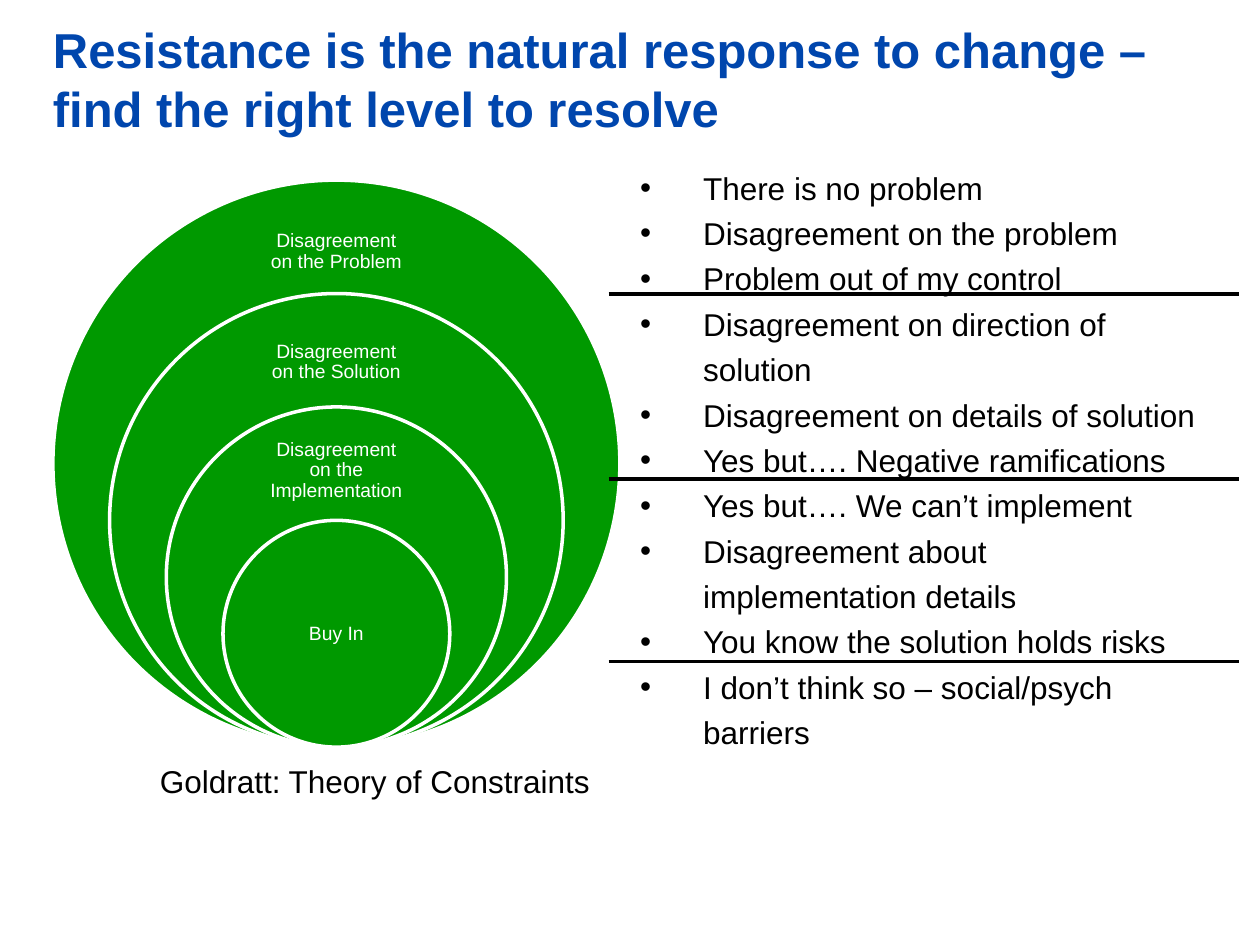
from lxml import etree
from pptx import Presentation
from pptx.dml.color import RGBColor
from pptx.enum.shapes import MSO_CONNECTOR, MSO_SHAPE
from pptx.enum.text import MSO_ANCHOR, MSO_AUTO_SIZE, PP_ALIGN
from pptx.oxml.ns import qn
from pptx.util import Inches, Pt

OVAL = MSO_SHAPE.OVAL
STRAIGHT = MSO_CONNECTOR.STRAIGHT
TOP, MIDDLE = MSO_ANCHOR.TOP, MSO_ANCHOR.MIDDLE
LEFT, CENTER = PP_ALIGN.LEFT, PP_ALIGN.CENTER
NO_FIT, GROW = MSO_AUTO_SIZE.NONE, MSO_AUTO_SIZE.SHAPE_TO_FIT_TEXT

COLORS = {"title": "0046AD", "circle": "009900", "outline": "FFFFFF",
          "label": "FFFFFF", "text": "000000", "divider": "000000"}

TITLE = "Resistance is the natural response to change – find the right level to resolve"
# Label, then top and height of its box
LEVELS = [
    ("Disagreement on the Problem", 1.66, 0.68),
    ("Disagreement on the Solution", 2.55, 0.65),
    ("Disagreement on the Implementation", 3.43, 0.61),
    ("Buy In", 4.58, 0.9),
]
OBJECTIONS = [
    "There is no problem",
    "Disagreement on the problem",
    "Problem out of my control",
    "Disagreement on direction of solution",
    "Disagreement on details of solution",
    "Yes but…. Negative ramifications",
    "Yes but…. We can’t implement",
    "Disagreement about implementation details",
    "You know the solution holds risks",
    "I don’t think so – social/psych barriers",
]


class SlideBuilder:
    font = "Arial"

    def __init__(self, slide):
        self.slide = slide

    def color(self, name):
        return RGBColor.from_string(COLORS[name])

    def style(self, paragraph, size, color, bold=False, align=LEFT):
        paragraph.alignment = align
        for run in paragraph.runs:
            run.font.name = self.font
            run.font.size = Pt(size)
            run.font.bold = bold
            run.font.color.rgb = self.color(color)

    def placeholder(self, index, box, anchor):
        holder = self.slide.placeholders[index]
        holder.left, holder.top, holder.width, holder.height = map(Inches, box)
        frame = holder.text_frame
        frame.margin_left = frame.margin_top = frame.margin_right = frame.margin_bottom = 0
        frame.word_wrap = True
        frame.auto_size = NO_FIT
        frame.vertical_anchor = anchor
        return frame

    def title(self, text, box):
        frame = self.placeholder(0, box, MIDDLE)
        frame.text = text
        self.style(frame.paragraphs[0], 28, "title", bold=True)

    def bullets(self, items, box):
        frame = self.placeholder(1, box, TOP)
        frame.text = "\n".join(items)
        for paragraph in frame.paragraphs:
            properties = paragraph._p.get_or_add_pPr()
            properties.set("marL", str(Inches(0.5)))
            properties.set("indent", str(-Inches(0.5)))
            etree.SubElement(properties, qn("a:buFont")).set("typeface", self.font)
            etree.SubElement(properties, qn("a:buChar")).set("char", "•")
            paragraph.line_spacing = 1.2
            paragraph.space_before = Pt(0)
            paragraph.space_after = Pt(0)
            self.style(paragraph, 18, "text")

    def circle(self, group, center, bottom, diameter):
        circle = group.shapes.add_shape(
            OVAL, Inches(center - diameter / 2), Inches(bottom - diameter),
            Inches(diameter), Inches(diameter))
        circle.shadow.inherit = False
        circle.fill.solid()
        circle.fill.fore_color.rgb = self.color("circle")
        circle.line.color.rgb = self.color("outline")
        circle.line.width = Pt(2)

    def label(self, group, text, box):
        frame = group.shapes.add_textbox(*map(Inches, box)).text_frame
        frame.margin_left = frame.margin_right = Inches(0.09)
        frame.margin_top = frame.margin_bottom = Inches(0.09)
        frame.word_wrap = True
        frame.vertical_anchor = MIDDLE
        frame.text = text
        frame.paragraphs[0].line_spacing = 0.9
        self.style(frame.paragraphs[0], 11, "label", align=CENTER)

    def divider(self, left, right, y):
        divider = self.slide.shapes.add_connector(
            STRAIGHT, Inches(left), Inches(y), Inches(right), Inches(y))
        divider.line.color.rgb = self.color("divider")
        divider.line.width = Pt(2.25)
        etree.SubElement(divider._element.spPr, qn("a:effectLst"))

    def caption(self, text, box):
        frame = self.slide.shapes.add_textbox(*map(Inches, box)).text_frame
        frame.word_wrap = False
        frame.auto_size = GROW
        frame.text = text
        self.style(frame.paragraphs[0], 18, "text")


def main():
    presentation = Presentation()
    presentation.slide_width, presentation.slide_height = Inches(10), Inches(7.5)
    slide = presentation.slides.add_slide(presentation.slide_layouts[1])
    builder = SlideBuilder(slide)

    builder.title(TITLE, (0.42, 0.25, 9.17, 0.75))

    # Nested circles share their lowest point, each 0.9 inch smaller
    levels = slide.shapes.add_group_shape()
    center, label_width = 2.67, 1.26
    for depth, (text, top, height) in enumerate(LEVELS):
        builder.circle(levels, center, 5.93, 4.5 - 0.9 * depth)
        builder.label(levels, text, (center - label_width / 2, top, label_width, height))

    # Objections, divided by the level they belong to
    builder.bullets(OBJECTIONS, (5.08, 1.28, 4.5, 4.8))
    for y in (2.33, 3.8, 5.25):
        builder.divider(4.83, 9.83, y)

    builder.caption("Goldratt: Theory of Constraints", (1.17, 6, 3.65, 0.4))

    presentation.save("out.pptx")


if __name__ == "__main__":
    main()
